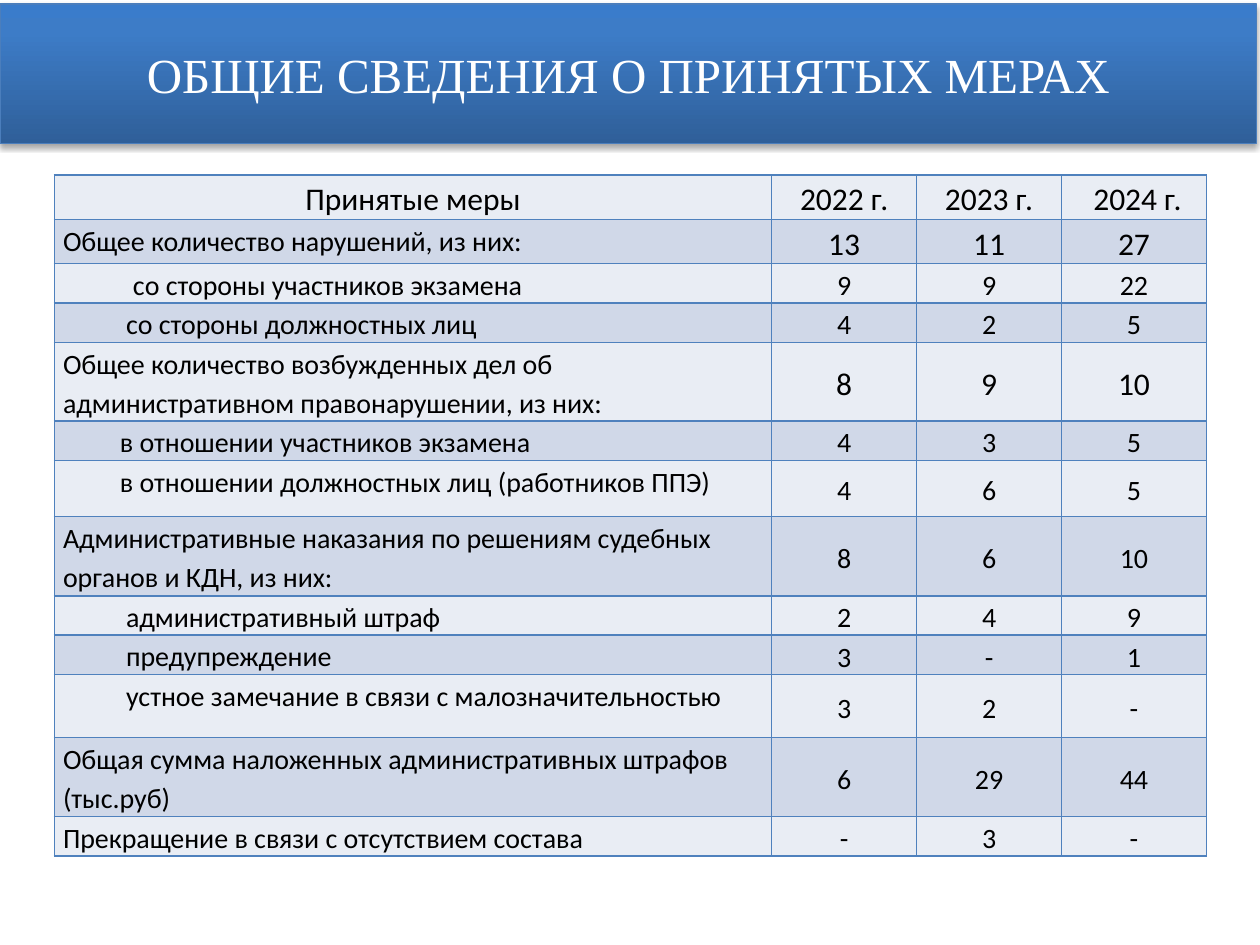
from pptx import Presentation
from pptx.dml.color import RGBColor as Rgb
from pptx.enum.text import MSO_ANCHOR as Anchor, MSO_AUTO_SIZE as Auto, PP_ALIGN as Align
from pptx.oxml import parse_xml
from pptx.oxml.ns import nsdecls
from pptx.util import Pt

HUES = {
    "text": "000000", "title": "FFFFFF", "edge": "4B7EBC", "grid": "4F81BD",
    "light": "E9EDF4", "dark": "D0D8E8", "shade": "000000",
    "low": "2F5F99", "mid": "3D7CC7", "high": "3A7CCB",
}
COLS = [410, 82.8, 82.8, 82.8]
ROWS = [
    (21.6, 0, 18, "Принятые меры", "2022 г.", "2023 г.", " 2024 г."),
    (21.6, 0, 18, "Общее количество нарушений, из них:", "13", "11", "27"),
    (21.6, 40, 16, "со стороны участников экзамена", "9", "9", "22"),
    (21.6, 36, 16, "со стороны должностных лиц", "4", "2", "5"),
    (41, 0, 18, "Общее количество возбужденных дел об административном "
     "правонарушении, из них:", "8", "9", "10"),
    (21.6, 32.5, 16, "в отношении участников экзамена", "4", "3", "5"),
    (32.2, 32.5, 16, "в отношении должностных лиц (работников ППЭ)", "4", "6", "5"),
    (45.2, 0, 16, "Административные наказания по решениям судебных органов "
     "и КДН, из них:", "8", "6", "10"),
    (21.6, 36, 16, "административный штраф", "2", "4", "9"),
    (21.6, 36, 16, "предупреждение", "3", "-", "1"),
    (36, 36, 16, "устное замечание в связи с малозначительностью", "3", "2", "-"),
    (45.2, 0, 16, "Общая сумма наложенных административных штрафов (тыс.руб)",
     "6", "29", "44"),
    (21.6, 0, 16, "Прекращение в связи с отсутствием состава", "-", "3", "-"),
]


def hue(name):
    """Return the named colour."""
    return Rgb.from_string(HUES[name])


def style(para, size, face, name, align):
    """Set the font and alignment of a paragraph."""
    para.alignment = align
    font = para.font
    font.size, font.name, font.color.rgb = Pt(size), face, hue(name)


def banner(slide, left, top, width, height):
    """Turn the title into a shaded band with a soft shadow."""
    title = slide.shapes.title
    title.left, title.top = Pt(left), Pt(top)
    title.width, title.height = Pt(width), Pt(height)
    stops = "".join(
        f'<a:gs pos="{pos * 1000}"><a:srgbClr val="{HUES[name]}"/></a:gs>'
        for pos, name in ((0, "low"), (80, "mid"), (100, "high")))
    props = title.element.spPr
    props.append(parse_xml(
        f'<a:prstGeom {nsdecls("a")} prst="rect"><a:avLst/></a:prstGeom>'))
    props.append(parse_xml(
        f'<a:gradFill {nsdecls("a")} rotWithShape="1"><a:gsLst>{stops}</a:gsLst>'
        '<a:lin ang="16200000" scaled="0"/></a:gradFill>'))
    title.line.color.rgb, title.line.width = hue("edge"), Pt(0.75)
    props.append(parse_xml(
        f'<a:effectLst {nsdecls("a")}><a:outerShdw blurRad="{Pt(3.1)}" '
        f'dist="{Pt(1.8)}" dir="5400000" rotWithShape="0">'
        f'<a:srgbClr val="{HUES["shade"]}"><a:alpha val="35000"/></a:srgbClr>'
        '</a:outerShdw></a:effectLst>'))
    frame = title.text_frame
    frame.text = "ОБЩИЕ СВЕДЕНИЯ О ПРИНЯТЫХ МЕРАХ"
    frame.auto_size, frame.word_wrap = Auto.NONE, False
    frame.vertical_anchor = Anchor.MIDDLE
    style(frame.paragraphs[0], 28, "Times New Roman", "title", Align.CENTER)


def paint(cell, name):
    """Give a cell its borders and fill."""
    props = cell._tc.get_or_add_tcPr()
    for side in "LRTB":
        props.append(parse_xml(
            f'<a:ln{side} {nsdecls("a")} w="{Pt(1)}"><a:solidFill>'
            f'<a:srgbClr val="{HUES["grid"]}"/></a:solidFill></a:ln{side}>'))
    cell.fill.solid()
    cell.fill.fore_color.rgb = hue(name)


def write(cell, text, size, align, inset, indent):
    """Put text into a cell."""
    cell.margin_left = cell.margin_right = Pt(inset)
    cell.margin_top = cell.margin_bottom = 0
    cell.vertical_anchor = Anchor.MIDDLE if align == Align.CENTER else Anchor.TOP
    cell.text = text
    para = cell.text_frame.paragraphs[0]
    para.line_spacing = 1.15
    style(para, size, "Calibri", "text", align)
    if indent:
        para._p.get_or_add_pPr().set("marL", str(Pt(indent)))


def grid(slide, left, top, width, height):
    """Draw the table of measures by year."""
    table = slide.shapes.add_table(
        len(ROWS), len(COLS), Pt(left), Pt(top), Pt(width), Pt(height)).table
    table.first_row = table.horz_banding = False
    for col, wide in zip(table.columns, COLS):
        col.width = Pt(wide)
    for r, (tall, indent, size, *texts) in enumerate(ROWS):
        table.rows[r].height = Pt(tall)
        for c, text in enumerate(texts):
            cell = table.cell(r, c)
            paint(cell, "dark" if r % 2 else "light")
            label = c == 0 and r > 0
            write(cell, text, 16 if label else size,
                  Align.LEFT if label else Align.CENTER,
                  5 if c in (0, 3) else 1.5, indent if label else 0)


def main():
    """Build and save the slide."""
    deck = Presentation()
    deck.slide_width, deck.slide_height = Pt(720), Pt(540)
    slide = deck.slides.add_slide(deck.slide_layouts[5])
    banner(slide, 0, 2.2, 718, 80)
    grid(slide, 31, 100, sum(COLS), sum(row[0] for row in ROWS))
    deck.save("out.pptx")


if __name__ == "__main__":
    main()
